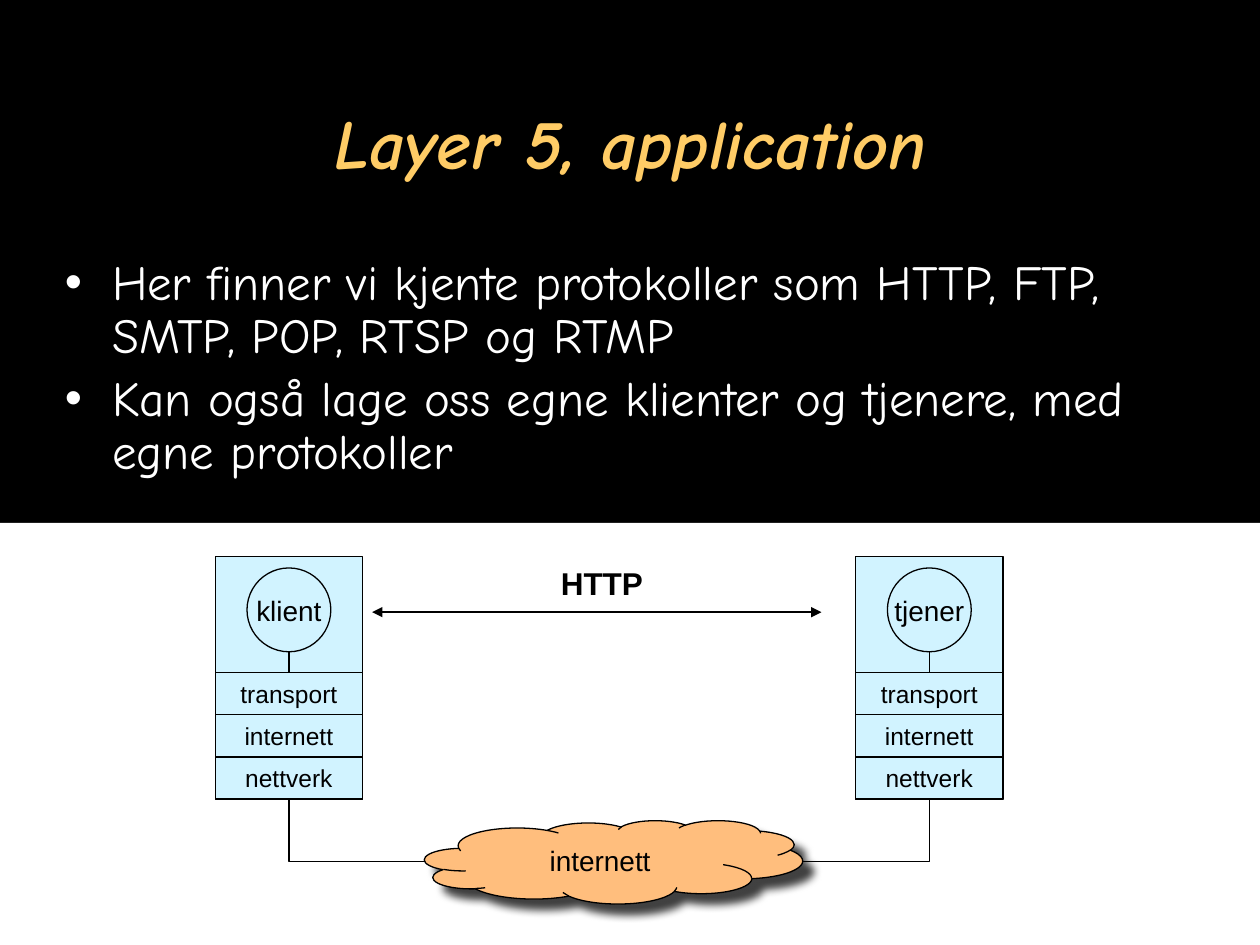
"""Build the application-layer slide: two protocol stacks joined by an internet cloud."""
from dataclasses import dataclass

from lxml import etree
from pptx import Presentation
from pptx import util as u
from pptx.dml.color import RGBColor
from pptx.enum import shapes, text
from pptx.oxml.ns import qn

COLORS = {"black": "000000", "white": "FFFFFF", "gold": "FFCC66",
          "ice": "D1F3FF", "peach": "FFBE7D"}
HEADING, LABEL = "Comic Neue", "Arial"
LAYERS = ("transport", "internett", "nettverk")
HOST_TOP, HOST_W, CIRCLE_TOP, CIRCLE_D = 11.22, 2.97, 11.45, 1.69
STACK_TOP, LAYER_H = 13.56, 0.85
STACK_BOTTOM = STACK_TOP + len(LAYERS) * LAYER_H
CLOUD_L, CLOUD_T, CLOUD_W, CLOUD_H = 8.56, 16.54, 7.62, 1.68
LINK_Y = 17.37


@dataclass(frozen=True)
class Host:
    name: str
    left: float

    @property
    def center(self) -> float:
        return self.left + HOST_W / 2


HOSTS = (Host("klient", 4.34), Host("tjener", 17.25))


def rgb(name: str) -> RGBColor:
    return RGBColor.from_string(COLORS[name])


def sub(parent, tag: str, **attrs: str):
    return etree.SubElement(parent, qn(tag), attrs)


def write(p, words: str, size: float, font: str, color: str = "black", **style) -> None:
    r = p.add_run()
    r.text = words
    r.font.color.rgb = rgb(color)
    for key, value in {"size": u.Pt(size), "name": font, **style}.items():
        setattr(r.font, key, value)


def add_box(s, kind, box: tuple, fill: str, words: str = "", size: float = 14, outlined: bool = True):
    sp = s.shapes.add_shape(kind, *map(u.Cm, box))
    sp.fill.solid()
    sp.fill.fore_color.rgb = rgb(fill)
    if outlined:
        sp.line.color.rgb = rgb("black")
        sp.line.width = u.Pt(0.75)
    else:
        sp.line.fill.background()
    sp.shadow.inherit = False
    if words:
        tf = sp.text_frame
        tf.word_wrap = False
        tf.vertical_anchor = text.MSO_ANCHOR.MIDDLE
        p = tf.paragraphs[0]
        p.alignment = text.PP_ALIGN.CENTER
        write(p, words, size, LABEL)
    return sp


def add_line(s, ends: tuple, bent: bool = False, arrows: bool = False):
    kind = shapes.MSO_CONNECTOR.ELBOW if bent else shapes.MSO_CONNECTOR.STRAIGHT
    cx = s.shapes.add_connector(kind, *map(u.Cm, ends))
    cx.line.color.rgb = rgb("black")
    cx.line.width = u.Pt(0.75)
    props = cx._element.spPr
    if bent:
        props.find(qn("a:prstGeom")).set("prst", "bentConnector2")
    if arrows:
        for tag in ("a:headEnd", "a:tailEnd"):
            sub(props.find(qn("a:ln")), tag, type="triangle")
    sub(props, "a:effectLst")
    return cx


def add_host(s, host: Host) -> None:
    rect, oval = shapes.MSO_SHAPE.RECTANGLE, shapes.MSO_SHAPE.OVAL
    add_box(s, rect, (host.left, HOST_TOP, HOST_W, STACK_BOTTOM - HOST_TOP), "ice")
    add_box(s, oval, (host.center - CIRCLE_D / 2, CIRCLE_TOP, CIRCLE_D, CIRCLE_D),
            "ice", host.name, 16)
    stem = add_line(s, (host.center, CIRCLE_TOP + CIRCLE_D, host.center, STACK_TOP))
    layers = [add_box(s, rect, (host.left, STACK_TOP + i * LAYER_H, HOST_W, LAYER_H), "ice", name)
              for i, name in enumerate(LAYERS)]
    stem.end_connect(layers[0], 0)


def add_cloud(s) -> None:
    sp = add_box(s, shapes.MSO_SHAPE.CLOUD, (CLOUD_L, CLOUD_T, CLOUD_W, CLOUD_H),
                 "peach", "internett", 16)
    effects = sp._element.spPr.find(qn("a:effectLst"))
    shadow = sub(effects, "a:outerShdw", blurRad=str(u.Pt(5)), dist=str(u.Pt(8.5)),
                 dir="2700000", algn="ctr", rotWithShape="0")
    sub(sub(shadow, "a:srgbClr", val=COLORS["black"]), "a:alpha", val="75000")


def add_bullets(s, lines: tuple) -> None:
    tf = s.shapes.add_textbox(*map(u.Cm, (1.06, 5.08, 23.29, 5.1))).text_frame
    tf.word_wrap = True
    for i, words in enumerate(lines):
        p = tf.add_paragraph() if i else tf.paragraphs[0]
        for key, value in {"line_spacing": 0.9, "space_before": u.Pt(5.6)}.items():
            setattr(p, key, value)
        props = p._p.get_or_add_pPr()
        props.set("marL", str(u.Cm(0.95)))
        props.set("indent", str(-u.Cm(0.95)))
        sub(props, "a:buFont", typeface=LABEL)
        sub(props, "a:buChar", char="•")
        write(p, words, 28, HEADING, "white")


def add_title(s, words: str) -> None:
    sp = s.shapes.title
    frame = {"left": 1.06, "top": 1.27, "width": 23.29, "height": 3.18}
    for key, value in frame.items():
        setattr(sp, key, u.Cm(value))
    sp.text_frame.vertical_anchor = text.MSO_ANCHOR.MIDDLE
    p = sp.text_frame.paragraphs[0]
    p.alignment = text.PP_ALIGN.CENTER
    write(p, words, 40, HEADING, "gold", bold=True, italic=True)


def main() -> None:
    prs = Presentation()
    prs.slide_width, prs.slide_height = u.Cm(25.4), u.Cm(19.05)
    s = prs.slides.add_slide(prs.slide_layouts[5])
    s.background.fill.solid()
    s.background.fill.fore_color.rgb = rgb("black")
    add_box(s, shapes.MSO_SHAPE.RECTANGLE, (0, 10.54, 25.4, 8.51), "white", outlined=False)
    add_title(s, "Layer 5, application")
    add_bullets(s, ("Her finner vi kjente protokoller som HTTP, FTP, SMTP, POP, RTSP og RTMP",
                    "Kan også lage oss egne klienter og tjenere, med egne protokoller"))
    for host in HOSTS:
        add_host(s, host)
    add_cloud(s)
    for host, edge in zip(HOSTS, (CLOUD_L, CLOUD_L + CLOUD_W)):
        add_line(s, (edge, LINK_Y, host.center, STACK_BOTTOM), bent=True)
    add_line(s, (7.5, 12.34, 16.56, 12.34), arrows=True)
    tf = s.shapes.add_textbox(*map(u.Cm, (9.91, 11.25, 4.45, 1.02))).text_frame
    tf.word_wrap = True
    tf.paragraphs[0].alignment = text.PP_ALIGN.CENTER
    write(tf.paragraphs[0], "HTTP", 18, LABEL, bold=True)
    prs.save("out.pptx")


if __name__ == "__main__":
    main()
